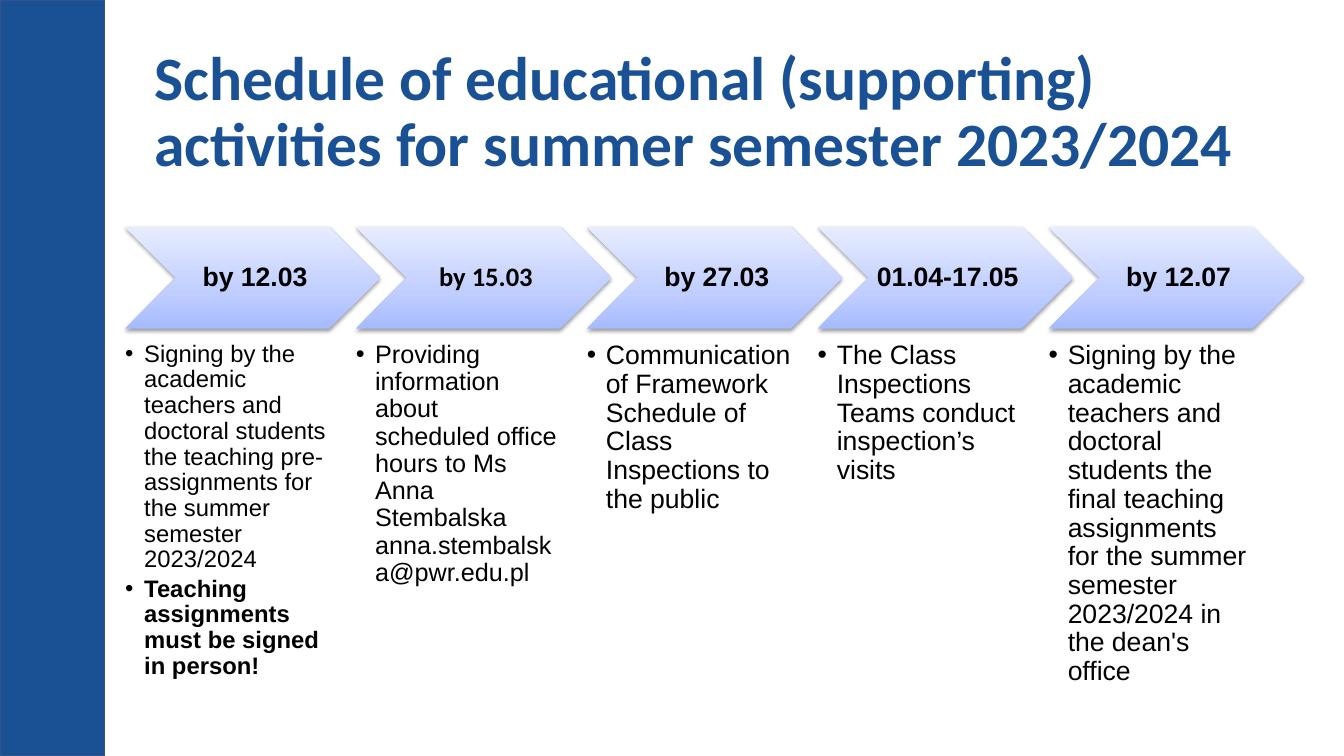
from lxml import etree
from pptx import Presentation
from pptx import util as u
from pptx.dml.color import RGBColor
from pptx.enum import shapes, text
from pptx.oxml.ns import qn

NAVY = "1A5194"
BLACK = "000000"
GRADIENT = [(0, "A6BBFF"), (35, "C0CEFF"), (100, "E7ECFF")]
STEP_PITCH = 2.29

STEPS = [
    ("by 12.03", "Arial", 17, [
        ("Signing by the academic teachers and doctoral students the teaching "
         "pre-assignments for the summer semester 2023/2024", False),
        ("Teaching assignments must be signed in person!", True)]),
    ("by 15.03", "Calibri", 18, [
        ("Providing information about scheduled office hours to Ms Anna "
         "Stembalska anna.stembalska@pwr.edu.pl", False)]),
    ("by 27.03", "Arial", 19, [
        ("Communication of Framework Schedule of Class Inspections to the public", False)]),
    ("01.04-17.05", "Arial", 19, [
        ("The Class Inspections Teams conduct inspection’s visits", False)]),
    ("by 12.07", "Arial", 19, [
        ("Signing by the academic teachers and doctoral students the final teaching "
         "assignments for the summer semester 2023/2024 in the dean's office", False)]),
]


def color(value):
    return RGBColor.from_string(value)


def box_lengths(box):
    return [u.Inches(length) for length in box]


def add_child(parent, tag, **attributes):
    child = etree.SubElement(parent, qn(tag))
    for name, value in attributes.items():
        child.set(name, str(value))
    return child


def set_margins(frame, left, top, right, bottom):
    frame.margin_left = u.Inches(left)
    frame.margin_top = u.Inches(top)
    frame.margin_right = u.Inches(right)
    frame.margin_bottom = u.Inches(bottom)
    frame.word_wrap = True


def add_run(paragraph, words, size, font_name, font_color, bold):
    paragraph.line_spacing = 0.9
    run = paragraph.add_run()
    run.text = words
    run.font.size = u.Pt(size)
    run.font.name = font_name
    run.font.bold = bold
    run.font.color.rgb = color(font_color)


def add_band(slide, box):
    band = slide.shapes.add_shape(shapes.MSO_SHAPE.RECTANGLE, *box_lengths(box))
    band.shadow.inherit = False
    band.fill.solid()
    band.fill.fore_color.rgb = color(NAVY)
    band.line.color.rgb = color("31538F")
    band.line.width = u.Pt(1)


def place_title(slide, box, words):
    title = slide.shapes.title
    title.left, title.top, title.width, title.height = box_lengths(box)
    frame = title.text_frame
    set_margins(frame, 0.1, 0.05, 0.1, 0.05)
    frame.auto_size = text.MSO_AUTO_SIZE.NONE
    frame.vertical_anchor = text.MSO_ANCHOR.MIDDLE
    paragraph = frame.paragraphs[0]
    paragraph.alignment = text.PP_ALIGN.LEFT
    add_run(paragraph, words, 44, "Calibri", NAVY, True)


def style_chevron(chevron):
    chevron.line.fill.background()
    chevron.fill.gradient()
    chevron.fill.gradient_angle = 90
    properties = chevron._element.spPr
    stops = properties.find(".//" + qn("a:gsLst"))
    for stop in list(stops):
        stops.remove(stop)
    for position, value in GRADIENT:
        stop = add_child(stops, "a:gs", pos=position * 1000)
        add_child(stop, "a:srgbClr", val=value)
    chevron.shadow.inherit = False
    shadow = add_child(properties.find(qn("a:effectLst")), "a:outerShdw",
                       blurRad=u.Pt(3.1), dist=u.Pt(1.6), dir=5400000, rotWithShape=0)
    shade = add_child(shadow, "a:srgbClr", val=BLACK)
    add_child(shade, "a:alpha", val=38000)


def add_chevron(slide, box, date, font_name):
    chevron = slide.shapes.add_shape(shapes.MSO_SHAPE.CHEVRON, *box_lengths(box))
    style_chevron(chevron)
    frame = chevron.text_frame
    set_margins(frame, 0.08, 0.03, 0.03, 0.03)
    frame.vertical_anchor = text.MSO_ANCHOR.MIDDLE
    paragraph = frame.paragraphs[0]
    paragraph.alignment = text.PP_ALIGN.CENTER
    add_run(paragraph, date, 19, font_name, BLACK, True)


def add_bullets(slide, box, bullets, size):
    frame = slide.shapes.add_textbox(*box_lengths(box)).text_frame
    set_margins(frame, 0, 0, 0, 0)
    for index, (words, bold) in enumerate(bullets):
        paragraph = frame.add_paragraph() if index else frame.paragraphs[0]
        properties = paragraph._p.get_or_add_pPr()
        properties.set("marL", str(u.Inches(0.19)))
        properties.set("indent", str(-u.Inches(0.19)))
        add_child(add_child(properties, "a:buClr"), "a:srgbClr", val=BLACK)
        add_child(properties, "a:buFont", typeface="Arial")
        add_child(properties, "a:buChar", char="•")
        paragraph.space_after = u.Pt(round(size * 0.15, 1))
        add_run(paragraph, words, size, "Arial", BLACK, bold)


def add_timeline(slide, left, top):
    for index, (date, date_font, size, bullets) in enumerate(STEPS):
        step_left = left + index * STEP_PITCH
        add_chevron(slide, (step_left, top, 2.53, 1.01), date, date_font)
        add_bullets(slide, (step_left, top + 1.14, 2.02, 3.37), bullets, size)


def main():
    presentation = Presentation()
    presentation.slide_width = u.Inches(13.33)
    presentation.slide_height = u.Inches(7.5)
    slide = presentation.slides.add_slide(presentation.slide_layouts[5])
    add_band(slide, (0, 0, 1.04, 7.5))
    place_title(slide, (1.43, 0.4, 11.5, 1.45),
                "Schedule of educational (supporting) activities for summer semester 2023/2024")
    add_timeline(slide, 1.24, 2.25)
    presentation.save("out.pptx")


if __name__ == "__main__":
    main()
